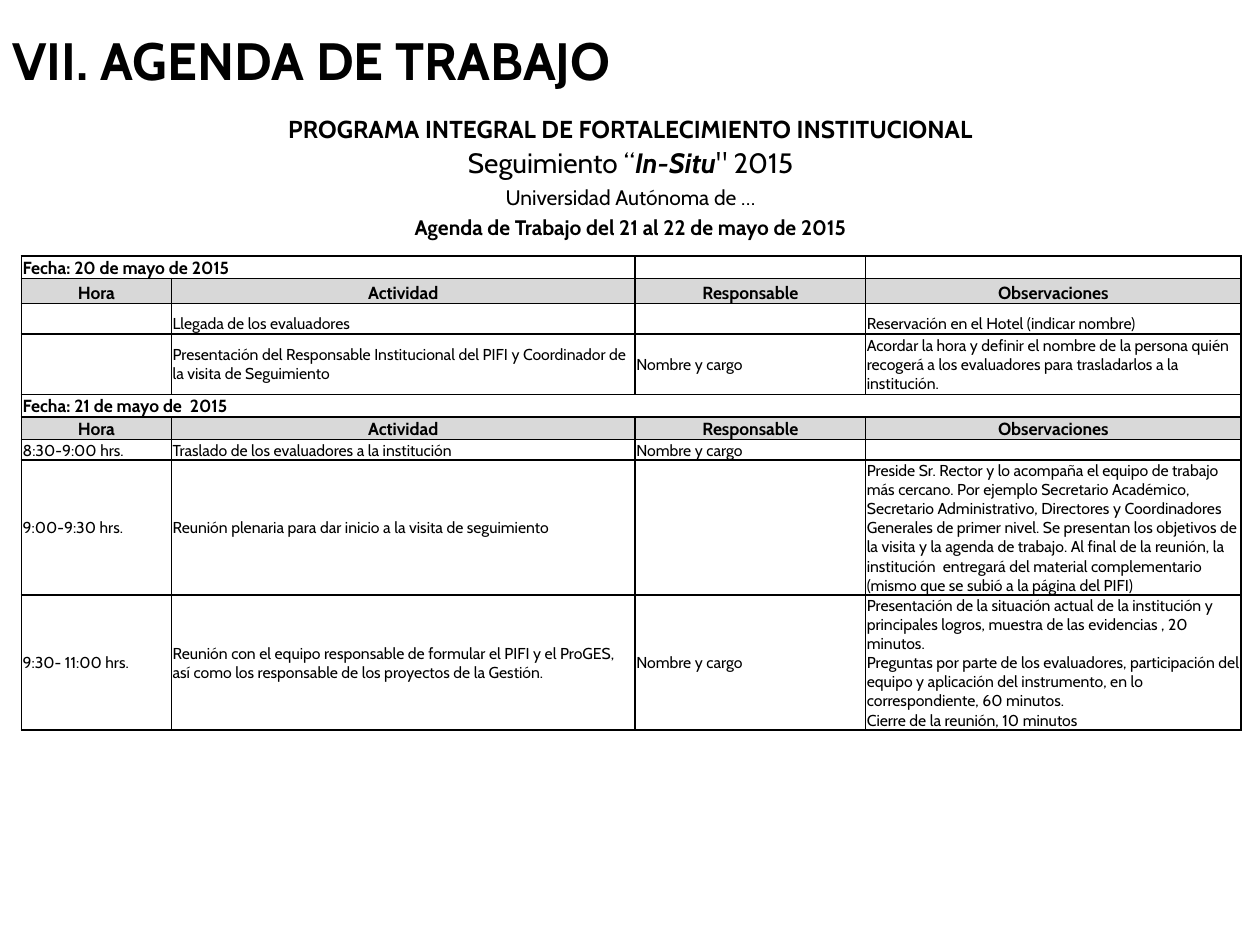
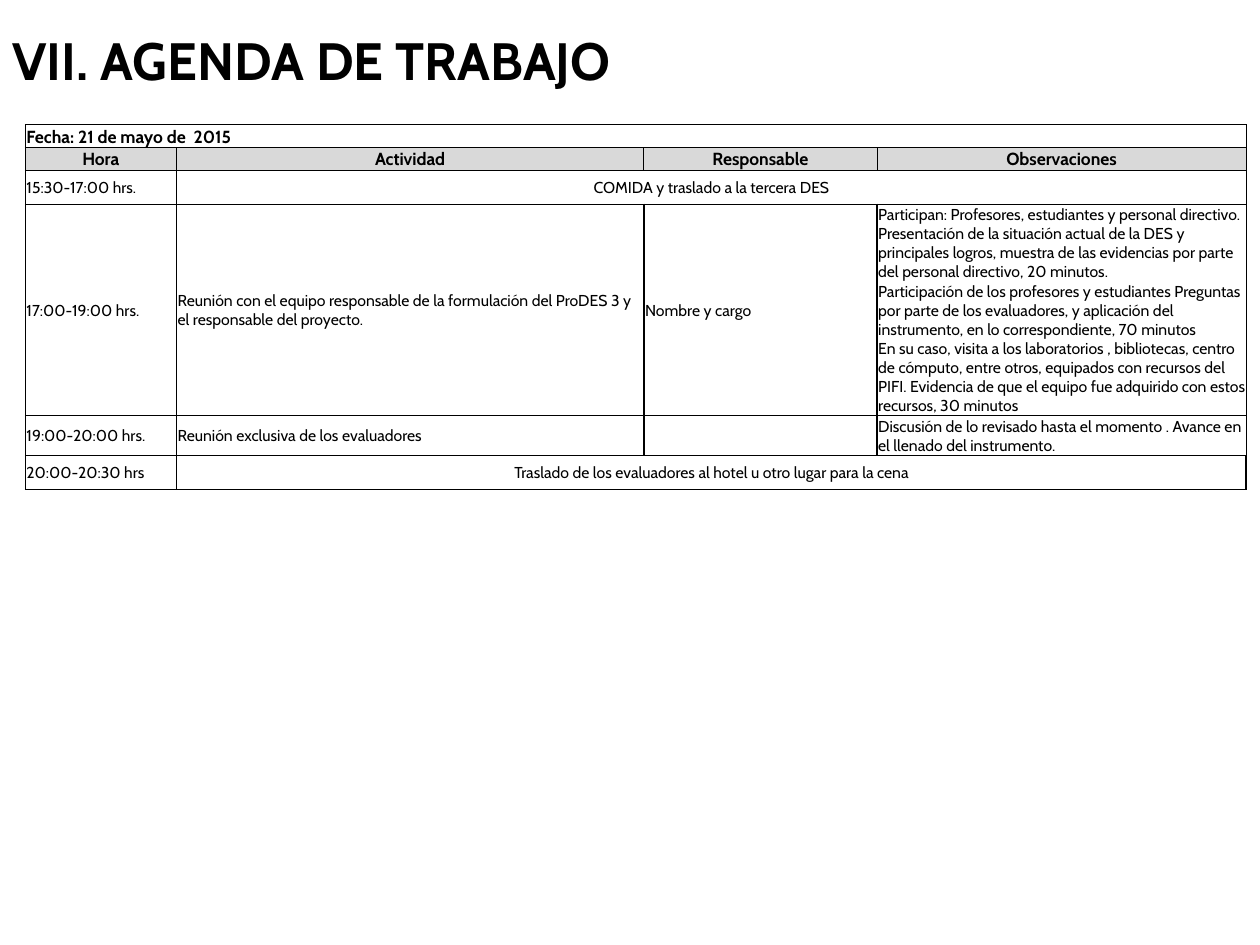
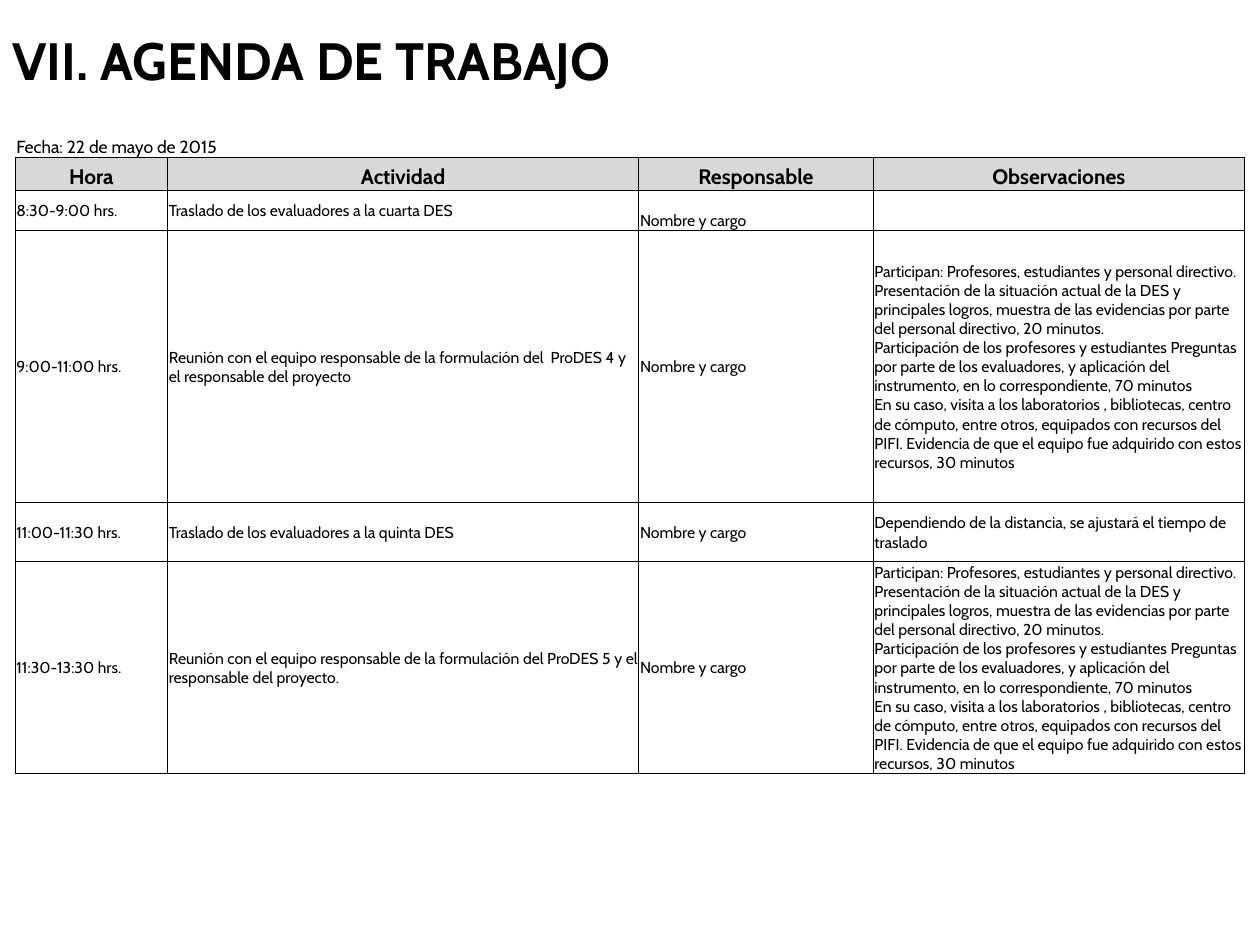
from lxml import etree
from pptx import Presentation
from pptx.dml.color import RGBColor
from pptx.enum.text import MSO_ANCHOR, PP_ALIGN
from pptx.oxml.ns import qn
from pptx.util import Inches, Pt

BLACK = RGBColor(0x00, 0x00, 0x00)
GREY = RGBColor(0xD8, 0xD8, 0xD8)
LIGHT_GREY = RGBColor(0xD9, 0xD9, 0xD9)
FONT = "Cabin"
MIDDLE, BOTTOM = MSO_ANCHOR.MIDDLE, MSO_ANCHOR.BOTTOM
LEFT, CENTER = PP_ALIGN.LEFT, PP_ALIGN.CENTER
PLAIN_TABLE = "{2D5ABB26-0587-4C30-8999-92F81FD0307C}"
ALL_SIDES = "LRTB"

# Row styles: size, bold, alignment, anchor, fill
PROGRAM = (14, True, CENTER, BOTTOM, None)
FOLLOW_UP = (16, False, CENTER, BOTTOM, None)
UNIVERSITY = (12, False, CENTER, BOTTOM, None)
PERIOD = (12, True, CENTER, BOTTOM, None)
DATE = (10, True, LEFT, BOTTOM, None)
PLAIN_DATE = (10, False, LEFT, BOTTOM, None)
HEADER = (10, True, CENTER, BOTTOM, GREY)
LIGHT_HEADER = (10, True, CENTER, BOTTOM, LIGHT_GREY)
LARGE_HEADER = (12, True, CENTER, BOTTOM, GREY)
ACTIVITY = (9, False, LEFT, MIDDLE, None)
LOW_ACTIVITY = (9, False, LEFT, BOTTOM, None)

# Wording used more than once
TITLE = "VII. AGENDA DE TRABAJO"
COLUMN_NAMES = ["Hora", "Actividad", "Responsable", "Observaciones"]
DATE_21 = "Fecha: 21 de mayo de  2015"
CONTACT = "Nombre y cargo"
DES_NOTES = (
    "Participan: Profesores, estudiantes y personal directivo.\v"
    "Presentación de la situación actual de la DES y principales logros, muestra de las "
    "evidencias por parte del personal directivo, 20 minutos.\n"
    "Participación de los profesores y estudiantes Preguntas por parte de los evaluadores, "
    "y aplicación del instrumento, en lo correspondiente, 70 minutos\n"
    "En su caso, visita a los laboratorios , bibliotecas, centro de cómputo, entre otros, "
    "equipados con recursos del PIFI. Evidencia de que el equipo fue adquirido con estos "
    "recursos, 30 minutos")


def draw_borders(cell, sides, width):
    properties = cell._tc.get_or_add_tcPr()
    for side in sides:
        tag = qn(f"a:ln{side}")
        for old_line in properties.findall(tag):
            properties.remove(old_line)
        line = etree.Element(tag, w=str(Pt(width)))
        fill = etree.SubElement(line, qn("a:solidFill"))
        etree.SubElement(fill, qn("a:srgbClr"), val=str(BLACK))
        # Border lines come before the fill, in the order L, R, T, B
        place = sum(properties.find(qn(f"a:ln{earlier}")) is not None
                    for earlier in ALL_SIDES[:ALL_SIDES.index(side)])
        properties.insert(place, line)


def add_agenda(page, left, top, widths, rows, border=0):
    """Each row is (height, style, texts); None continues the cell to its left."""
    frame = page.shapes.add_table(
        len(rows), len(widths), Inches(left), Inches(top),
        Inches(sum(widths)), Inches(sum(row[0] for row in rows)))
    table = frame.table
    table.first_row = table.horz_banding = False
    table._tbl.tblPr.find(qn("a:tableStyleId")).text = PLAIN_TABLE
    for column, width in zip(table.columns, widths):
        column.width = Inches(width)

    for row_index, (height, style, texts) in enumerate(rows):
        table.rows[row_index].height = Inches(height)
        size, bold, alignment, anchor, fill = style
        for column_index, text in enumerate(texts):
            cell = table.cell(row_index, column_index)
            cell.margin_left = cell.margin_right = cell.margin_top = Inches(0.01)
            cell.margin_bottom = 0
            cell.vertical_anchor = anchor
            if fill is None:
                cell.fill.background()
            else:
                cell.fill.solid()
                cell.fill.fore_color.rgb = fill
            if border:
                draw_borders(cell, ALL_SIDES, border)
            cell.text_frame.text = text or ""
            # Activities that run across several columns are centred
            spans = None in texts[column_index + 1:column_index + 2]
            for para in cell.text_frame.paragraphs:
                para.alignment = CENTER if spans and column_index else alignment
                for line_break in para._p.findall(qn("a:br")):
                    etree.SubElement(line_break, qn("a:rPr"), sz=str(size * 100))
                if not para.runs:
                    etree.SubElement(para._p, qn("a:endParaRPr"), sz=str(size * 100))
                for span in para.runs:
                    span.font.name = FONT
                    span.font.size = Pt(size)
                    span.font.bold = bold
                    span.font.color.rgb = BLACK
        # Join each text with the continued cells after it
        for column_index, text in enumerate(texts):
            last = column_index
            while last + 1 < len(texts) and texts[last + 1] is None:
                last += 1
            if text is not None and last > column_index:
                table.cell(row_index, column_index).merge(table.cell(row_index, last))
    return table


deck = Presentation()
deck.slide_width, deck.slide_height = Inches(10), Inches(7.5)
pages = [deck.slides.add_slide(deck.slide_layouts[6]) for _ in range(3)]

# Slide 1: agenda for 20 and 21 May
add_agenda(pages[0], 0.17, 2.03, [1.19, 3.68, 1.83, 2.98], [
    (0.18, DATE, ["Fecha: 20 de mayo de 2015", None, "", ""]),
    (0.2, HEADER, COLUMN_NAMES),
    (0.24, LOW_ACTIVITY, ["", "Llegada de los evaluadores", "",
                          "Reservación en el Hotel (indicar nombre)"]),
    (0.48, ACTIVITY, [
        "",
        "Presentación del Responsable Institucional del PIFI y Coordinador de la visita "
        "de Seguimiento",
        CONTACT,
        "Acordar la hora y definir el nombre de la persona quién recogerá a los "
        "evaluadores para trasladarlos a la institución."]),
    (0.18, DATE, [DATE_21, None, None, None]),
    (0.18, LIGHT_HEADER, COLUMN_NAMES),
    (0.16, ACTIVITY, ["8:30-9:00 hrs.", "Traslado de los evaluadores a la institución",
                      CONTACT, ""]),
    (1.07, ACTIVITY, [
        "9:00-9:30 hrs.",
        "Reunión plenaria para dar inicio a la visita de seguimiento",
        "",
        "Preside Sr. Rector y lo acompaña el equipo de trabajo más cercano. Por ejemplo "
        "Secretario Académico, Secretario Administrativo, Directores y Coordinadores "
        "Generales de primer nivel. Se presentan los objetivos de la visita y la agenda de "
        "trabajo. Al final de la reunión, la institución  entregará del material "
        "complementario (mismo que se subió a la página del PIFI)"]),
    (1.07, ACTIVITY, [
        "9:30- 11:00 hrs.",
        "Reunión con el equipo responsable de formular el PIFI y el ProGES, así como los "
        "responsable de los proyectos de la Gestión.",
        CONTACT,
        "Presentación de la situación actual de la institución y principales logros, "
        "muestra de las evidencias , 20 minutos.\n"
        "Preguntas por parte de los evaluadores, participación del equipo y aplicación del "
        "instrumento, en lo correspondiente, 60 minutos.\n"
        "Cierre de la reunión, 10 minutos"]),
], border=1)

# Slide 1: programme heading
heading = add_agenda(pages[0], 0.2, 0.84, [1.18, 3.65, 1.82, 2.96], [
    (0.31, PROGRAM, ["PROGRAMA INTEGRAL DE FORTALECIMIENTO INSTITUCIONAL", None, None, None]),
    (0.28, FOLLOW_UP, ["Seguimiento “", None, None, None]),
    (0.24, UNIVERSITY, ["Universidad Autónoma de …", None, None, None]),
    (0.24, PERIOD, ["Agenda de Trabajo del 21 al 22 de mayo de 2015", None, None, None]),
    (0.16, ACTIVITY, ["", "", "", ""]),
])
para = heading.cell(1, 0).text_frame.paragraphs[0]
for text, emphasis in [("In-Situ", True), ("\" 2015", False)]:
    span = para.add_run()
    span.text = text
    span.font.name = FONT
    span.font.size = Pt(16)
    span.font.bold = span.font.italic = emphasis
    span.font.color.rgb = BLACK

# Slide 2: afternoon of 21 May
afternoon = add_agenda(pages[1], 0.2, 0.99, [1.2, 3.71, 1.85, 2.93], [
    (0.18, DATE, [DATE_21, None, None, None]),
    (0.18, LIGHT_HEADER, COLUMN_NAMES),
    (0.27, ACTIVITY, ["15:30-17:00 hrs.", "COMIDA y traslado a la tercera DES", None, None]),
    (1.68, ACTIVITY, [
        "17:00-19:00 hrs.",
        "Reunión con el equipo responsable de la formulación del ProDES 3 y el responsable "
        "del proyecto.",
        CONTACT, DES_NOTES]),
    (0.31, ACTIVITY, [
        "19:00-20:00 hrs.", "Reunión exclusiva de los evaluadores", "",
        "Discusión de lo revisado hasta el momento . Avance en el llenado del instrumento."]),
    (0.27, ACTIVITY, [
        "20:00-20:30 hrs",
        "Traslado de los evaluadores al hotel u otro lugar para la cena", None, None]),
], border=0.5)
for row_index in (3, 4):
    for column_index, sides in [(1, "R"), (2, "LR"), (3, "L")]:
        draw_borders(afternoon.cell(row_index, column_index), sides, 1)
draw_borders(afternoon.cell(5, 1), "R", 1)

# Slide 3: agenda for 22 May, with an open date row
last_day = add_agenda(pages[2], 0.12, 1.07, [1.21, 3.74, 1.86, 2.95], [
    (0.18, PLAIN_DATE, ["Fecha: 22 de mayo de 2015", None, "", ""]),
    (0.26, LARGE_HEADER, COLUMN_NAMES),
    (0.32, ACTIVITY, ["8:30-9:00 hrs.", "Traslado de los evaluadores a la cuarta DES",
                      CONTACT, ""]),
    (2.16, ACTIVITY, [
        "9:00-11:00 hrs.",
        "Reunión con el equipo responsable de la formulación del  ProDES 4 y el responsable "
        "del proyecto",
        CONTACT, DES_NOTES]),
    (0.47, ACTIVITY, [
        "11:00-11:30 hrs.", "Traslado de los evaluadores a la quinta DES", CONTACT,
        "Dependiendo de la distancia, se ajustará el tiempo de traslado"]),
    (1.68, ACTIVITY, [
        "11:30-13:30 hrs.",
        "Reunión con el equipo responsable de la formulación del ProDES 5 y el responsable "
        "del proyecto.",
        CONTACT, DES_NOTES]),
], border=0.5)
last_day.cell(2, 2).vertical_anchor = BOTTOM
for cell in last_day.rows[0].cells:
    properties = cell._tc.get_or_add_tcPr()
    for side in "LRT":
        properties.remove(properties.find(qn(f"a:ln{side}")))

# Title on every slide
for page in pages:
    box = page.shapes.add_textbox(0, Inches(0.09), Inches(10), Inches(0.77))
    box.text_frame.word_wrap = True
    box.text_frame.vertical_anchor = MIDDLE
    box.text_frame.text = TITLE
    span = box.text_frame.paragraphs[0].runs[0]
    span.font.name = FONT
    span.font.size = Pt(30)
    span.font.bold = True
    span.font.color.rgb = BLACK

deck.save("out.pptx")
